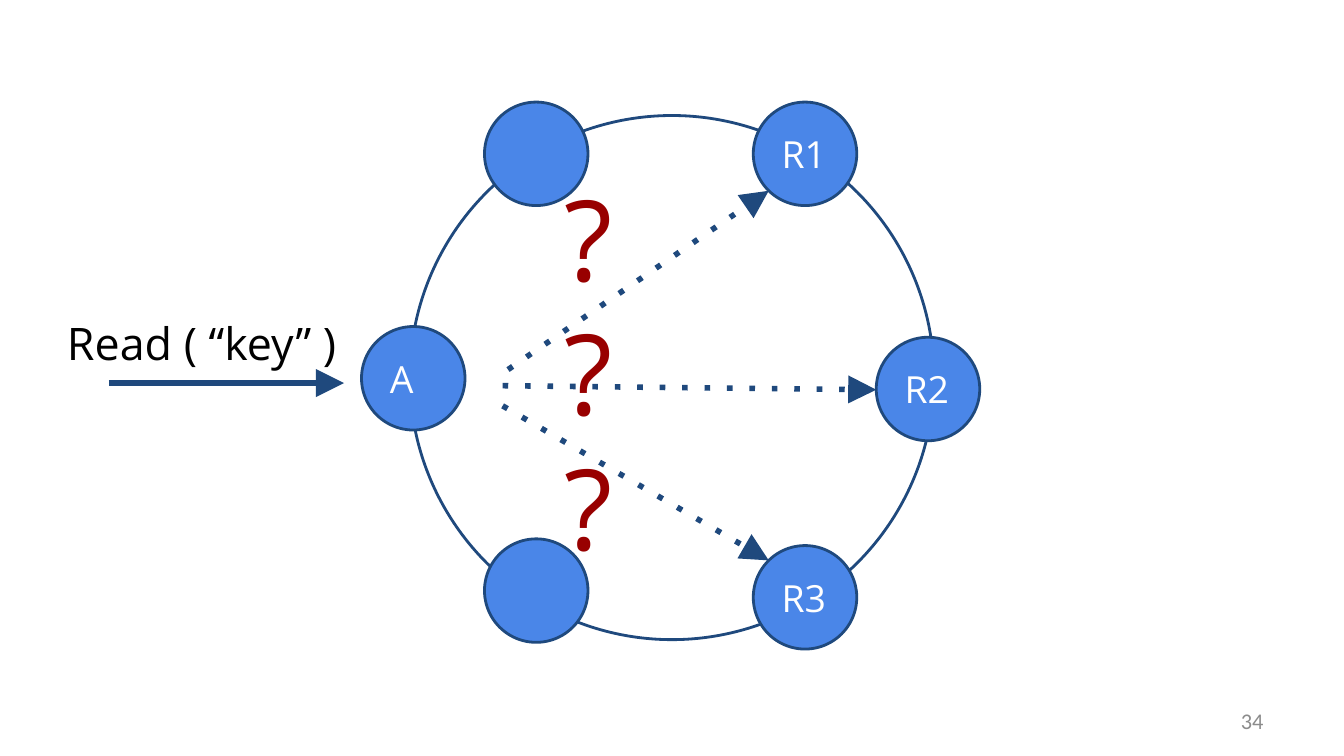
from dataclasses import dataclass

from lxml.etree import SubElement
from pptx import Presentation
from pptx.dml.color import RGBColor
from pptx.enum.shapes import MSO_CONNECTOR as Connector, MSO_SHAPE as Shape
from pptx.enum.text import MSO_ANCHOR as Anchor, PP_ALIGN as Align
from pptx.oxml.ns import qn
from pptx.util import Emu, Pt

PX = 4572  # EMU per px, at 200 px to the inch
NODE = 154


@dataclass(frozen=True)
class Theme:
    outline: str = "1F497D"
    node: str = "4A86E8"
    node_label: str = "FFFFFF"
    question: str = "980000"
    request: str = "000000"
    number: str = "8C8C8C"
    font: str = "Open Sans"
    number_font: str = "Calibri"
    question_size: int = 60
    request_size: int = 24
    label_size: int = 20
    number_size: int = 12
    thin: float = 1.5
    thick: float = 3


def px(*lengths):
    return [Emu(length * PX) for length in lengths]


def rgb(code):
    return RGBColor.from_string(code)


def write(frame, text, *, size, color, font, align=Align.LEFT,
          anchor=Anchor.TOP, inset=(20, 20)):
    """Fill a text frame, one paragraph for each line of text."""
    frame.word_wrap = True
    frame.vertical_anchor = anchor
    side, edge = px(*inset)
    frame.margin_left = frame.margin_right = side
    frame.margin_top = frame.margin_bottom = edge
    frame.text = text
    for paragraph in frame.paragraphs:
        paragraph.alignment = align
        for run in paragraph.runs:
            run.font.size = Pt(size)
            run.font.name = font
            run.font.color.rgb = rgb(color)


class Diagram:
    def __init__(self, slide, theme):
        self.slide = slide
        self.theme = theme

    def circle(self, left, top, size, fill=None):
        circle = self.slide.shapes.add_shape(Shape.OVAL, *px(left, top, size, size))
        circle.shadow.inherit = False
        if fill:
            circle.fill.solid()
            circle.fill.fore_color.rgb = rgb(fill)
        else:
            circle.fill.background()
        circle.line.color.rgb = rgb(self.theme.outline)
        circle.line.width = Pt(self.theme.thin)
        return circle

    def node(self, left, top, label=""):
        node = self.circle(left, top, NODE, self.theme.node)
        if label:
            write(node.text_frame, label, size=self.theme.label_size,
                  color=self.theme.node_label, font=self.theme.font,
                  anchor=Anchor.MIDDLE)

    def arrow(self, start, end, dash="solid"):
        arrow = self.slide.shapes.add_connector(Connector.STRAIGHT, *px(*start, *end))
        arrow.line.color.rgb = rgb(self.theme.outline)
        arrow.line.width = Pt(self.theme.thick)
        stroke = arrow.line._get_or_add_ln()
        SubElement(stroke, qn("a:prstDash"), val=dash)
        SubElement(stroke, qn("a:tailEnd"), type="triangle", w="lg", len="lg")
        SubElement(arrow._element.spPr, qn("a:effectLst"))

    def text(self, box, text, **style):
        label = self.slide.shapes.add_textbox(*px(*box))
        write(label.text_frame, text, **style)


def main():
    deck = Presentation()
    deck.slide_width, deck.slide_height = px(2000, 1125)
    theme = Theme()
    diagram = Diagram(deck.slides.add_slide(deck.slide_layouts[6]), theme)

    diagram.circle(610, 172, 780)
    for left, top, label in [(538, 486, "A"), (721, 802, ""), (1121, 812, "R3"),
                             (1304, 502, "R2"), (1121, 152, "R1"), (721, 152, "")]:
        diagram.node(left, top, label)

    diagram.arrow((162, 570), (512, 570))
    for start, replica in [((756, 550), (1144, 284)), ((748, 574), (1304, 580)),
                           ((748, 604), (1144, 834))]:
        diagram.arrow(start, replica, "dot")

    diagram.text((820, 232, 120, 604), "\n".join("???"), size=theme.question_size,
                 color=theme.question, font=theme.font)
    diagram.text((80, 450, 458, 100), "Read ( “key” )", size=theme.request_size,
                 color=theme.request, font=theme.font)
    diagram.text((1434, 1043, 466, 60), "34", size=theme.number_size,
                 color=theme.number, font=theme.number_font, align=Align.RIGHT,
                 anchor=Anchor.MIDDLE, inset=(20, 10))
    deck.save("out.pptx")


if __name__ == "__main__":
    main()
